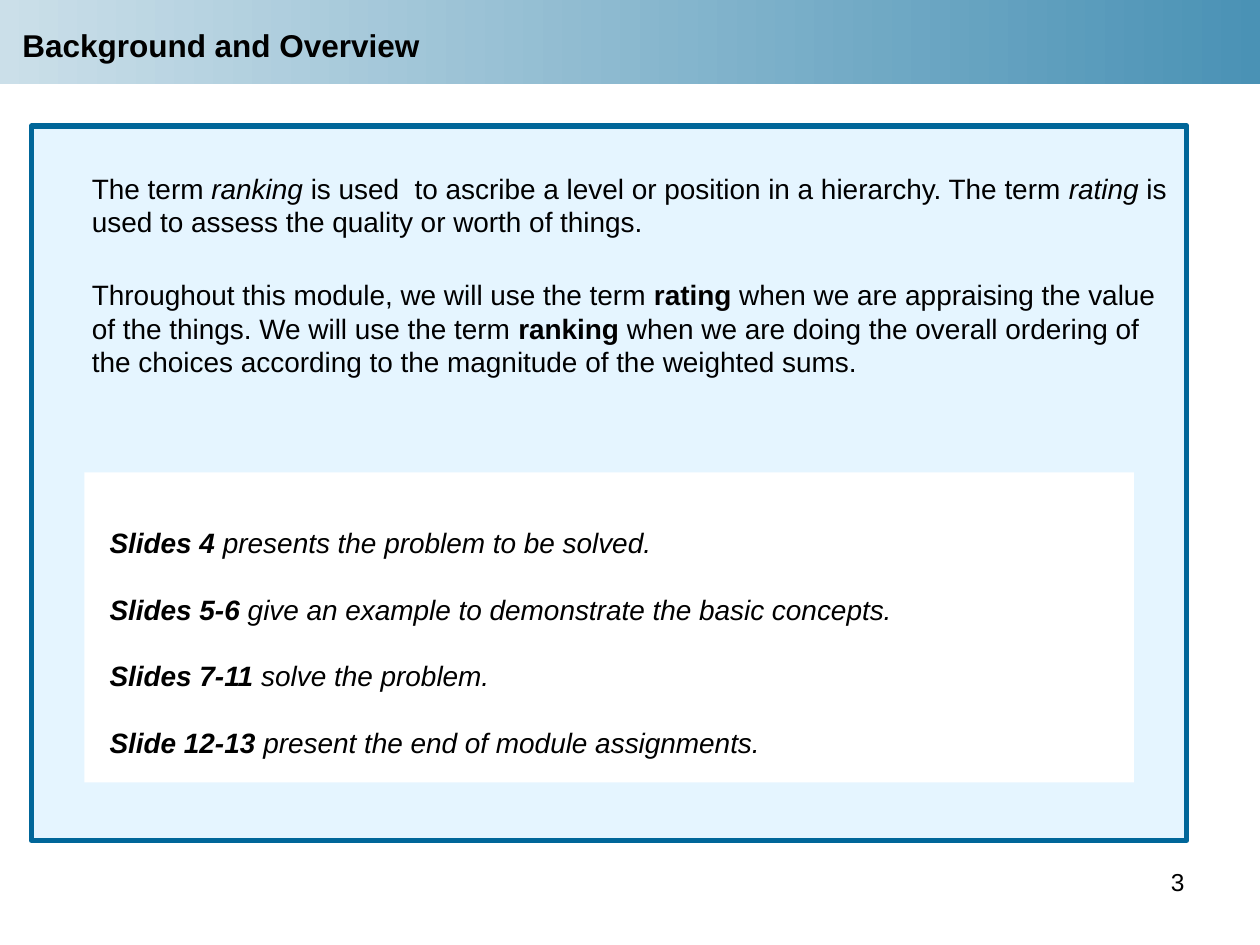
from pptx import Presentation
from pptx.dml.color import RGBColor
from pptx.enum.shapes import MSO_SHAPE
from pptx.enum.text import MSO_ANCHOR, PP_ALIGN
from pptx.util import Inches, Pt

RECT = MSO_SHAPE.RECTANGLE
TOP, MIDDLE = MSO_ANCHOR.TOP, MSO_ANCHOR.MIDDLE
LEFT, RIGHT = PP_ALIGN.LEFT, PP_ALIGN.RIGHT

BLACK = RGBColor(0x00, 0x00, 0x00)
WHITE = RGBColor(0xFF, 0xFF, 0xFF)
BLUE = RGBColor(0x00, 0x66, 0x99)
PALE = RGBColor(0xE5, 0xF5, 0xFF)
MIST = RGBColor(0xCB, 0xDF, 0xE9)
TEAL = RGBColor(0x4A, 0x92, 0xB5)

TERMS = [
    [("The term ", ""), ("ranking", "i"),
     (" is used  to ascribe a level or position in a hierarchy. The term ", ""),
     ("rating", "i"),
     (" is used to assess the quality or worth of things.", "")],
    [("Throughout this module, we will use the term ", ""), ("rating", "b"),
     (" when we are appraising the value of the things. We will use the term ", ""),
     ("ranking", "b"),
     (" when we are doing the overall ordering of the choices according to "
      "the magnitude of the weighted sums.", "")],
]
GUIDE = [
    ("Slides 4", "presents the problem to be solved."),
    ("Slides 5-6", "give an example to demonstrate the basic concepts."),
    ("Slides 7-11", "solve the problem."),
    ("Slide 12-13", "present the end of module assignments."),
]


class Deck:
    font = "Arial"
    color = BLACK

    def __init__(self):
        self.prs = Presentation()
        self.prs.slide_width, self.prs.slide_height = Inches(10), Inches(7.5)
        self.slide = self.prs.slides.add_slide(self.prs.slide_layouts[6])

    def rect(self, box, fill=None, line=None):
        shape = self.slide.shapes.add_shape(RECT, *map(Inches, box))
        shape.shadow.inherit = False
        if fill is not None:
            shape.fill.solid()
            shape.fill.fore_color.rgb = fill
        if line is None:
            shape.line.fill.background()
        else:
            shape.line.color.rgb = line
            shape.line.width = Pt(3)
        return shape

    def band(self, box, colors):
        """Draw a bar that fades from left to right."""
        fill = self.rect(box).fill
        fill.gradient()
        fill.gradient_angle = 0
        for stop, color, pos in zip(fill.gradient_stops, colors, (0, 1)):
            stop.color.rgb = color
            stop.position = pos

    def label(self, box, text, size, style="", anchor=TOP, align=LEFT):
        shape = self.slide.shapes.add_textbox(*map(Inches, box))
        self.prose(shape, [[(text, style)]], size, anchor=anchor, align=align)

    def prose(self, shape, paras, size, inset=(0.1, 0.05, 0.1), gap=0,
              anchor=TOP, align=LEFT):
        """Fill a shape with paragraphs of (text, style) runs; style holds b, i."""
        frame = shape.text_frame
        frame.word_wrap = True
        frame.vertical_anchor = anchor
        frame.margin_left, frame.margin_top, frame.margin_right = map(Inches, inset)
        for num, runs in enumerate(paras):
            para = frame.add_paragraph() if num else frame.paragraphs[0]
            para.alignment = align
            para.space_before = Pt(gap if num else 0)
            para.font.name, para.font.size = self.font, Pt(size)
            para.font.color.rgb = self.color
            for text, style in runs:
                run = para.add_run()
                run.text = text
                run.font.bold = "b" in style
                run.font.italic = "i" in style


def main():
    deck = Deck()
    deck.band((0, 0, 10, 0.67), (MIST, TEAL))
    deck.label((0.08, 0.13, 9, 0.45), "Background and Overview", 18, "b", MIDDLE)

    panel = deck.rect((0.25, 1, 9.17, 5.67), PALE, BLUE)
    deck.prose(panel, TERMS, 16, (0.48, 0.36, 0.1), 22.5)

    card = deck.rect((0.67, 3.75, 8.33, 2.46), WHITE)
    lines = [[(name + " ", "bi"), (what, "i")] for name, what in GUIDE]
    deck.prose(card, lines, 16, (0.2, 0.42, 0.2), 19)

    deck.label((7.17, 6.83, 2.33, 0.52), "3", 14, align=RIGHT)
    deck.prs.save("out.pptx")


if __name__ == "__main__":
    main()
